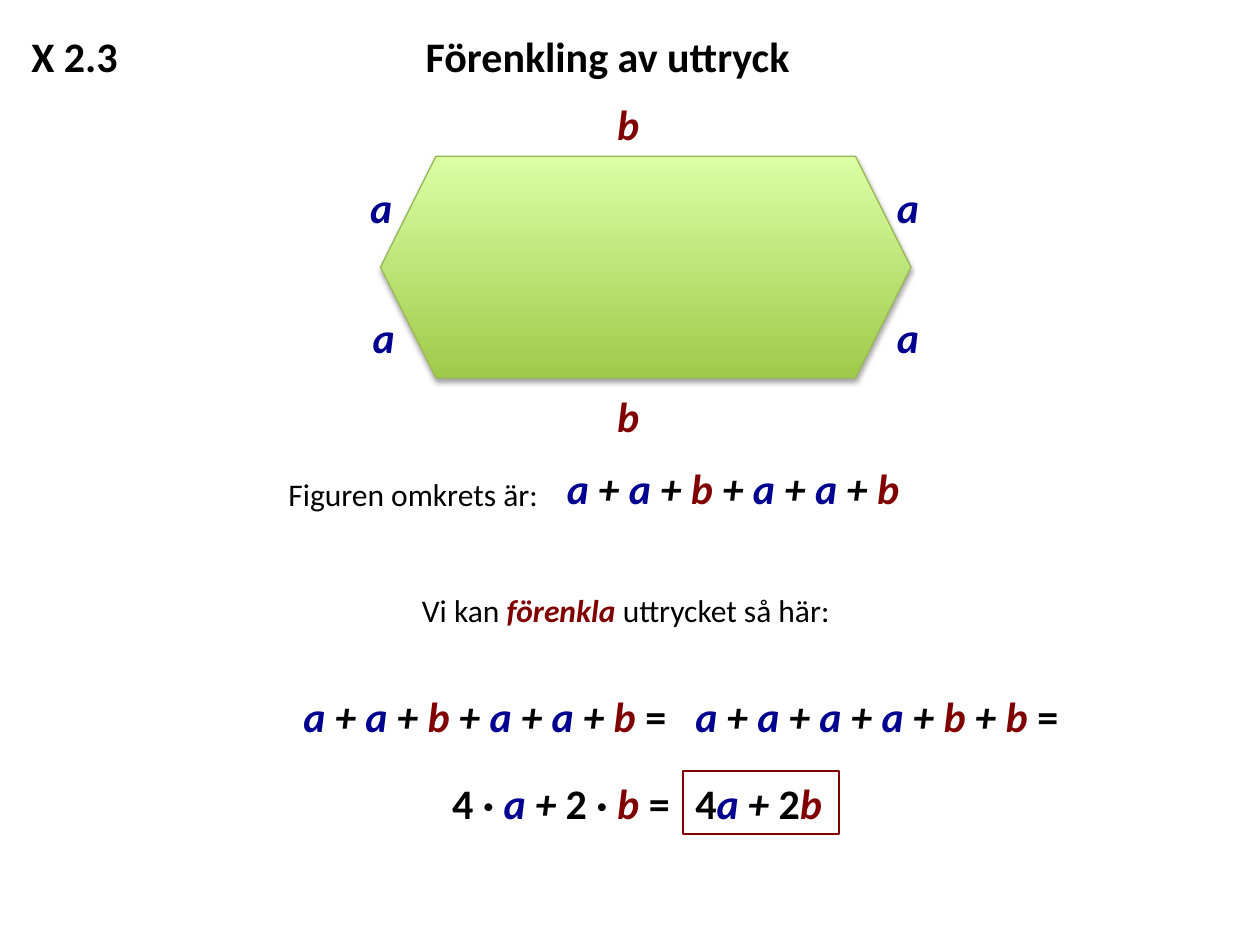
import pptx
import pptx.util
import pptx.dml.color
import pptx.enum.shapes
import pptx.enum.text
import pptx.oxml
import pptx.oxml.ns

Inches, Pt = pptx.util.Inches, pptx.util.Pt
RGBColor = pptx.dml.color.RGBColor
SHAPE = pptx.enum.shapes.MSO_SHAPE

BLACK = RGBColor(0x00, 0x00, 0x00)
NAVY = RGBColor(0x00, 0x00, 0x90)
MAROON = RGBColor(0x80, 0x00, 0x00)
GREEN = RGBColor(0xA0, 0xCA, 0x4A)
LIME = RGBColor(0xDA, 0xFF, 0xA5)
EDGE = RGBColor(0x98, 0xB9, 0x55)

# Colour and italics of the symbols in a formula
STYLE = {"a": (NAVY, True), "b": (MAROON, True), "+": (BLACK, True)}

deck = pptx.Presentation()
deck.slide_width, deck.slide_height = Inches(10), Inches(7.5)
slide = deck.slides.add_slide(deck.slide_layouts[6])


def write(words, left, top, width, height=0.5, size=24, bold=True,
          wrap=True, accent=None, box=None):
    """Write runs parted by "|"; symbols take their style, accent is stressed."""
    if box is None:
        box = slide.shapes.add_textbox(
            Inches(left), Inches(top), Inches(width), Inches(height))
    frame = box.text_frame
    frame.word_wrap = wrap
    frame.auto_size = pptx.enum.text.MSO_AUTO_SIZE.SHAPE_TO_FIT_TEXT
    para = frame.paragraphs[0]
    para.alignment = pptx.enum.text.PP_ALIGN.LEFT
    for part in words.split("|"):
        key = part.strip()
        stress = key == accent
        color, slant = (MAROON, True) if stress else STYLE.get(key, (BLACK, False))
        run = para.add_run()
        run.text = part
        run.font.name, run.font.size = "Calibri", Pt(size)
        run.font.bold, run.font.italic = bold or stress, slant
        run.font.color.rgb = color
    return box


# Heading, with a tab stop between number and title
head = write("X 2.3\tFörenkling av uttryck", 0.15, 0.19, 9.64)
props = head.text_frame.paragraphs[0]._p.get_or_add_pPr()
props.insert(0, pptx.oxml.parse_xml(
    f'<a:tabLst {pptx.oxml.ns.nsdecls("a")}>'
    f'<a:tab pos="{Inches(3.13)}" algn="l"/></a:tabLst>'))

# Hexagon with gradient and soft shadow
hexa = slide.shapes.add_shape(
    SHAPE.HEXAGON, Inches(3.02), Inches(1.24), Inches(4.21), Inches(1.76))
hexa.fill.gradient()
hexa.fill.gradient_angle = 90
for stop, color, place in zip(hexa.fill.gradient_stops, (GREEN, LIME), (0, 1)):
    stop.color.rgb, stop.position = color, place
hexa.line.color.rgb, hexa.line.width = EDGE, Pt(0.75)
hexa.shadow.inherit = False
glow = hexa._element.spPr.find(pptx.oxml.ns.qn("a:effectLst"))
glow.append(pptx.oxml.parse_xml(
    f'<a:outerShdw {pptx.oxml.ns.nsdecls("a")} blurRad="{Pt(3.1)}" '
    f'dist="{Pt(1.8)}" dir="5400000" rotWithShape="0">'
    '<a:srgbClr val="000000"><a:alpha val="35000"/></a:srgbClr></a:outerShdw>'))

# Side labels
for name, left, top in (("a", 7.02, 1.39), ("b", 4.8, 3.05), ("b", 4.8, 0.73),
                        ("a", 7.02, 2.42), ("a", 2.86, 2.42), ("a", 2.84, 1.39)):
    write(name, left, top, 0.43)

# Perimeter
write("Figuren omkrets är:", 2.19, 3.72, 2.21, 0.4, size=18, bold=False, wrap=False)
write("a |+ |a |+ |b |+ |a |+ |a |+ |b", 4.4, 3.62, 3.21)

# Simplification
write("Vi kan |förenkla |uttrycket så här:", 3.25, 4.64, 3.54, 0.4,
      size=18, bold=False, wrap=False, accent="förenkla")
write("a |+ |a |+ |b |+ |a |+ |a |+ |b |=", 2.31, 5.43, 3.12)
write("a |+ |a |+ |a |+ |a |+ |b |+ |b |=", 5.42, 5.43, 3.19, wrap=False)
write("4 · |a |+ |2 · |b |=", 3.49, 6.12, 2.01, wrap=False)

# Framed answer
frame = slide.shapes.add_shape(
    SHAPE.RECTANGLE, Inches(5.42), Inches(6.12), Inches(1.24), Inches(0.5))
frame.fill.background()
frame.line.color.rgb, frame.line.width = MAROON, Pt(1.5)
frame.shadow.inherit = False
write("4|a |+ |2|b", 5.42, 6.12, 1.24, box=frame)

deck.save("out.pptx")
